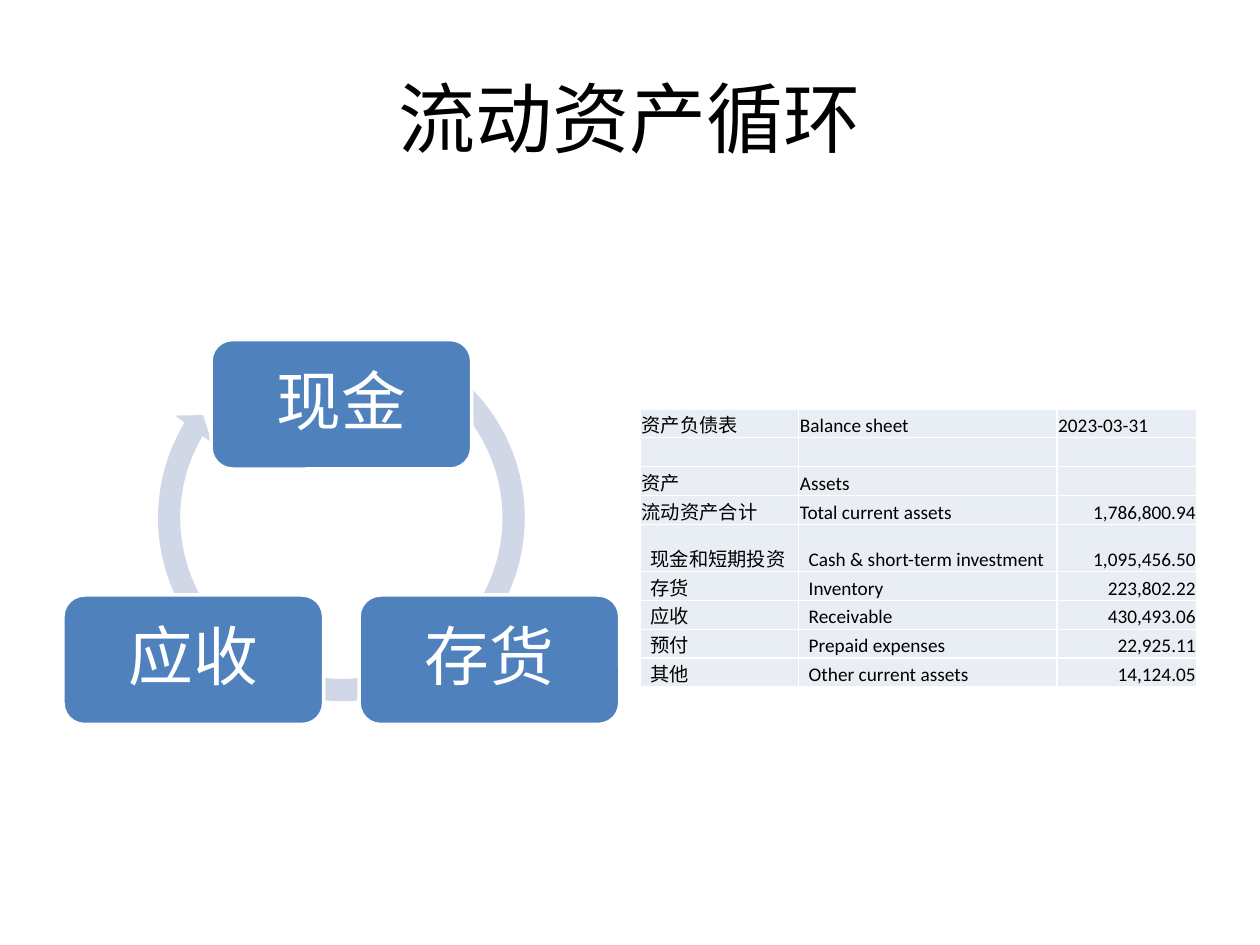
from lxml import etree
from pptx import Presentation
from pptx.dml.color import RGBColor
from pptx.enum import shapes, text
from pptx.oxml import ns
from pptx.util import Pt

COLORS = {"black": "000000", "white": "FFFFFF", "box": "4F81BD",
          "arrow": "D0D8E8", "cell": "E9EDF4"}
ALIGN = text.PP_ALIGN


def write(frame, words, size, color="black", align=ALIGN.LEFT, spacing=None):
    para = frame.paragraphs[0]
    para.alignment = align
    para.line_spacing = spacing
    if not words:
        para._p.get_or_add_endParaRPr().set("sz", str(size * 100))
        return
    span = para.add_run()
    span.text = words
    span.font.size = Pt(size)
    span.font.name = "Calibri"
    span.font.color.rgb = RGBColor.from_string(COLORS[color])


def paint(fill, color):
    fill.solid()
    fill.fore_color.rgb = RGBColor.from_string(COLORS[color])


deck = Presentation()
deck.slide_width, deck.slide_height = Pt(720), Pt(540)
page = deck.slides.add_slide(deck.slide_layouts[6])

title = page.shapes.add_textbox(Pt(36), Pt(21.6), Pt(648), Pt(90)).text_frame
title.word_wrap = True
title.vertical_anchor = text.MSO_ANCHOR.MIDDLE
write(title, "流动资产循环", 44, align=ALIGN.CENTER)

arrow = page.shapes.add_shape(shapes.MSO_SHAPE.CIRCULAR_ARROW,
                              Pt(83.5), Pt(184.3), Pt(223.2), Pt(223.2))
for index, value in enumerate((0.057, 3.405, 126.548, 181.058, 0.059)):
    arrow.adjustments[index] = value
arrow.shadow.inherit = False
paint(arrow.fill, "arrow")
arrow.line.fill.background()

for label, left, top in (("现金", 120.6, 194), ("存货", 205.2, 340), ("应收", 36, 340)):
    box = page.shapes.add_shape(shapes.MSO_SHAPE.ROUNDED_RECTANGLE,
                                Pt(left), Pt(top), Pt(149), Pt(74))
    box.shadow.inherit = False
    paint(box.fill, "box")
    paint(box.line.fill, "white")
    box.line.width = Pt(2)
    frame = box.text_frame
    frame.word_wrap = True
    frame.vertical_anchor = text.MSO_ANCHOR.MIDDLE
    frame.margin_left = frame.margin_right = Pt(10.8)
    frame.margin_top = frame.margin_bottom = Pt(10.8)
    write(frame, label, 37, "white", ALIGN.CENTER, 0.9)

rows = [
    ("资产负债表", "Balance sheet", "2023-03-31"),
    ("", "", ""),
    ("资产", "Assets", ""),
    ("流动资产合计", "Total current assets", "1,786,800.94"),
    ("现金和短期投资", "Cash & short-term investment", "1,095,456.50"),
    ("存货", "Inventory", "223,802.22"),
    ("应收", "Receivable", "430,493.06"),
    ("预付", "Prepaid expenses", "22,925.11"),
    ("其他", "Other current assets", "14,124.05"),
]
TOTAL_ROW, TALL_ROW = 3, 4
widths = (90.4, 147.6, 80)
heights = [27 if index == TALL_ROW else 16.5 for index in range(len(rows))]
table = page.shapes.add_table(len(rows), len(widths), Pt(366), Pt(233.6),
                              Pt(sum(widths)), Pt(sum(heights))).table
table.first_row = table.horz_banding = False
for column, width in zip(table.columns, widths):
    column.width = Pt(width)

for row_index, values in enumerate(rows):
    table.rows[row_index].height = Pt(heights[row_index])
    for column_index, value in enumerate(values):
        cell = table.cell(row_index, column_index)
        cell.vertical_anchor = text.MSO_ANCHOR.BOTTOM
        indent = 5 if row_index > TOTAL_ROW and column_index < 2 else 0
        cell.margin_left = Pt(0.7 + indent)
        cell.margin_right = cell.margin_top = Pt(0.7)
        cell.margin_bottom = Pt(0)
        number = row_index >= TOTAL_ROW and column_index == 2
        write(cell.text_frame, value, 11, align=ALIGN.RIGHT if number else ALIGN.LEFT)
        properties = cell._tc.get_or_add_tcPr()
        for side in ("a:lnL", "a:lnR", "a:lnT", "a:lnB"):
            border = etree.SubElement(properties, ns.qn(side), w=str(Pt(1)))
            solid = etree.SubElement(border, ns.qn("a:solidFill"))
            etree.SubElement(solid, ns.qn("a:srgbClr"), val=COLORS["white"])
        paint(cell.fill, "cell")

deck.save("out.pptx")
